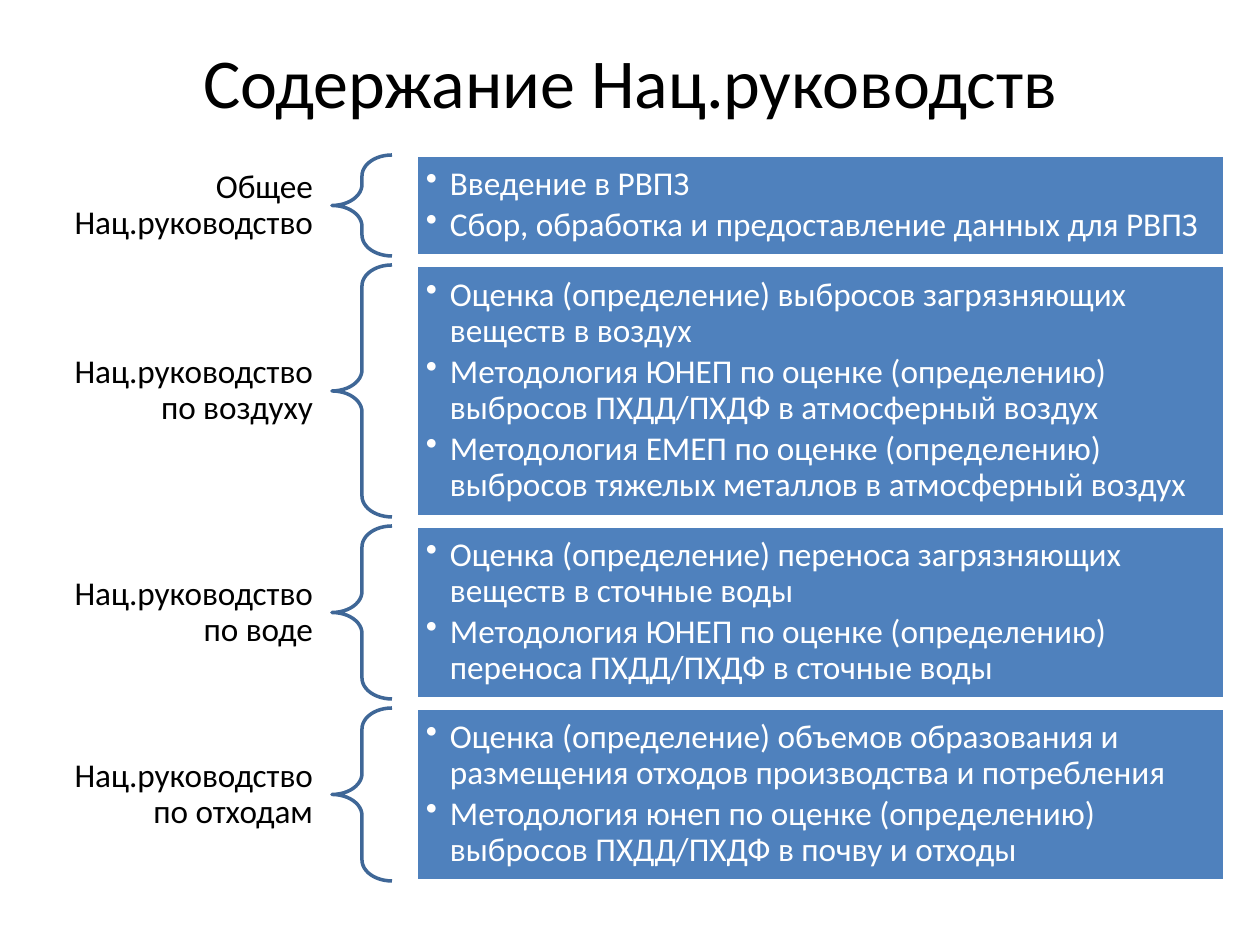
from pptx import Presentation
from pptx.dml.color import RGBColor
from pptx.enum.shapes import MSO_SHAPE as Shape
from pptx.enum.text import MSO_ANCHOR as Anchor, PP_ALIGN as Align
from pptx.oxml.ns import qn
from pptx.util import Emu, Pt
from lxml.etree import SubElement

FONT = "Calibri"
LEFT, TOP, WIDTH, GAP = 35, 155, 1190, 9

# Label, height in px, list items
ROWS = [
    ("Общее Нац.руководство", 101, [
        "Введение в РВПЗ",
        "Сбор, обработка и предоставление данных для РВПЗ"]),
    ("Нац.руководство по воздуху", 252, [
        "Оценка (определение) выбросов загрязняющих веществ в воздух",
        "Методология ЮНЕП по оценке (определению) выбросов ПХДД/ПХДФ в атмосферный воздух",
        "Методология ЕМЕП по оценке (определению) выбросов тяжелых металлов в атмосферный воздух"]),
    ("Нац.руководство по воде", 173, [
        "Оценка (определение) переноса загрязняющих веществ в сточные воды",
        "Методология ЮНЕП по оценке (определению) переноса ПХДД/ПХДФ в сточные воды"]),
    ("Нац.руководство по отходам", 173, [
        "Оценка (определение) объемов образования и размещения отходов производства и потребления",
        "Методология юнеп по оценке (определению) выбросов ПХДД/ПХДФ в почву и отходы"]),
]


def px(num):
    return Emu(round(num * 914400 / 126))


def color(code):
    return RGBColor.from_string(code)


def style(para, size, code, align):
    para.alignment = align
    for run in para.runs:
        run.font.name = FONT
        run.font.size = Pt(size)
        run.font.color.rgb = color(code)


def setup(frame, side, edge):
    frame.word_wrap = True
    frame.vertical_anchor = Anchor.MIDDLE
    frame.margin_left = frame.margin_right = px(side)
    frame.margin_top = frame.margin_bottom = px(edge)


def bullet(para):
    props = para._p.get_or_add_pPr()
    props.set("marL", str(px(24)))
    props.set("indent", str(-px(24)))
    SubElement(props, qn("a:buChar")).set("char", "•")


def outline(shape, code):
    shape.shadow.inherit = False
    shape.line.color.rgb = color(code)
    shape.line.width = Pt(2)


def add_title(slide, x, y, w, h):
    title = slide.shapes.title
    title.left, title.top, title.width, title.height = map(px, (x, y, w, h))
    frame = title.text_frame
    frame.text = "Содержание Нац.руководств"
    frame.vertical_anchor = Anchor.MIDDLE
    style(frame.paragraphs[0], 40, "000000", Align.CENTER)


def add_row(slide, x, y, w, h, label, items):
    shapes = slide.shapes

    # Label, centred on the row
    tall = 87
    box = shapes.add_textbox(px(x), px(y + (h - tall) / 2), px(297), px(tall))
    setup(box.text_frame, 19, 6)
    box.text_frame.text = label
    para = box.text_frame.paragraphs[0]
    para.line_spacing = 0.9
    style(para, 19, "000000", Align.RIGHT)

    # Brace
    brace = shapes.add_shape(Shape.LEFT_BRACE, px(x + 297), px(y), px(60), px(h))
    brace.adjustments[0] = 0.35
    brace.adjustments[1] = 0.5
    brace.fill.background()
    outline(brace, "3F6797")

    # Panel with its list
    inset = 381
    panel = shapes.add_shape(Shape.RECTANGLE, px(x + inset), px(y), px(w - inset), px(h))
    panel.fill.solid()
    panel.fill.fore_color.rgb = color("4F81BD")
    outline(panel, "FFFFFF")
    frame = panel.text_frame
    setup(frame, 10, 10)
    frame.text = "\n".join(items)
    for para in frame.paragraphs:
        para.line_spacing = 0.9
        para.space_after = Pt(3)
        style(para, 19, "FFFFFF", Align.LEFT)
        bullet(para)


def main():
    deck = Presentation()
    deck.slide_width, deck.slide_height = px(1260), px(945)
    slide = deck.slides.add_slide(deck.slide_layouts[5])
    add_title(slide, 63, 27, 1134, 108)
    y = TOP
    for label, h, items in ROWS:
        add_row(slide, LEFT, y, WIDTH, h, label, items)
        y += h + GAP
    deck.save("out.pptx")


if __name__ == "__main__":
    main()
